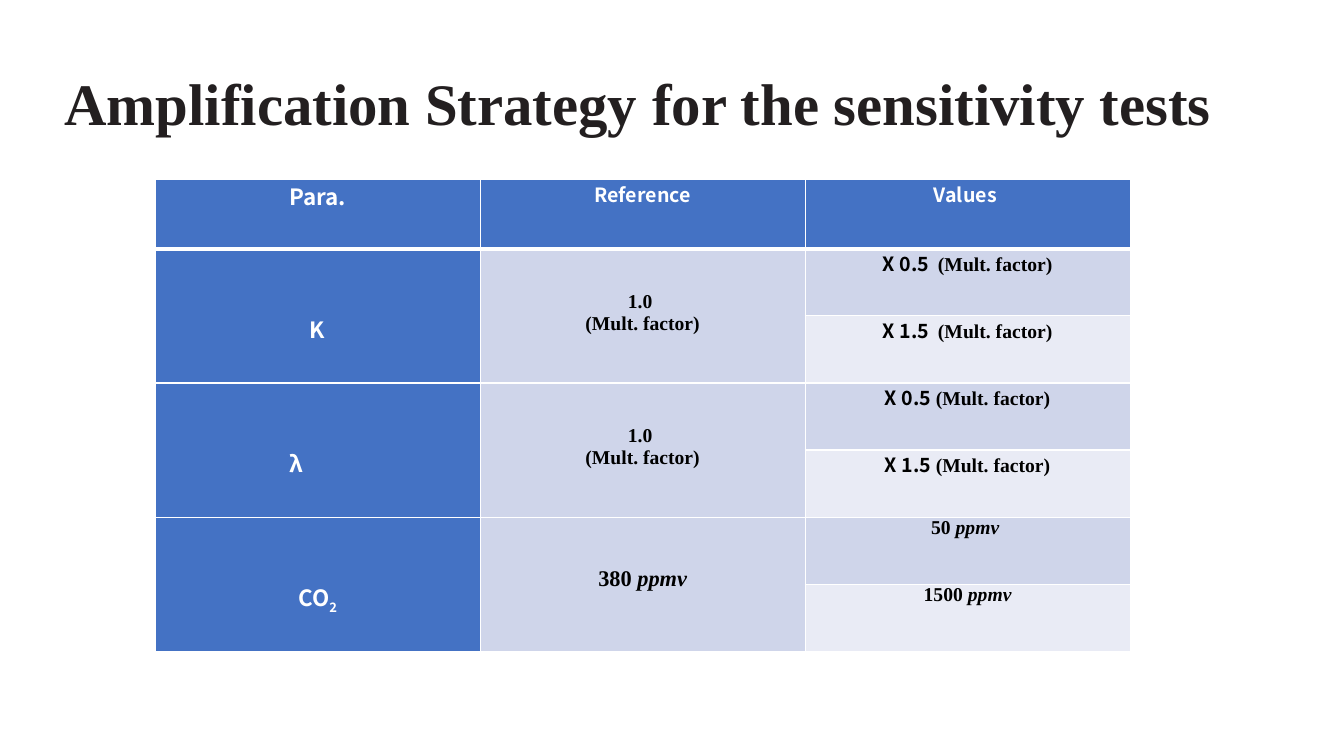
from lxml.etree import SubElement
from pptx import Presentation
from pptx.dml.color import RGBColor
from pptx.enum.text import MSO_ANCHOR as Anchor, MSO_AUTO_SIZE as AutoSize, PP_ALIGN as Align
from pptx.oxml.ns import qn
from pptx.util import Cm, Pt

COLORS = {
    "title": "231F20", "white": "FFFFFF", "black": "000000",
    "blue": "4472C4", "band": "CFD5EA", "light": "E9EBF5",
}
SANS, SERIF = "Noto Sans CJK SC", "Times New Roman"

TITLE = "Amplification Strategy for the sensitivity tests"
HEADERS = [("Para.", 16), ("Reference", 14), ("Values ", 14)]
FACTOR = ("(Mult. factor)", {})
UNIT = {"italic": True}
REFERENCE_FACTOR = {"lines": [[("1.0 ", {})], [FACTOR]], "size": 14, "top": 1.07}
PARAMETERS = [
    {
        "name": {"lines": [[("K", {})]]},
        "reference": REFERENCE_FACTOR,
        "values": [[("X 0.5  ", {"font": SANS}), FACTOR], [("X 1.5  ", {"font": SANS}), FACTOR]],
    },
    {
        "name": {"lines": [[("λ", {})]], "left": 3.38, "align": Align.LEFT},
        "reference": REFERENCE_FACTOR,
        "values": [[("X 0.5 ", {"font": SANS}), FACTOR], [("X 1.5 ", {"font": SANS}), FACTOR]],
    },
    {
        "name": {"lines": [[("CO", {}), ("2", {"baseline": -25000})]]},
        "reference": {"lines": [[("380 ", {}), ("ppmv", UNIT)]], "size": 16, "top": 1.24},
        "values": [[("50 ", {}), ("ppmv ", UNIT)], [("1500 ", {}), ("ppmv", UNIT)]],
    },
]

TABLE_LEFT, TABLE_TOP = 3.91, 4.52
COLUMN_WIDTH, HEADER_HEIGHT, ROW_HEIGHT = 8.19, 1.75, 1.69
SIDE_MARGIN = 0.17


def add_text(paragraph, text, font=SERIF, size=14, color="black", italic=False, baseline=None):
    run = paragraph.add_run()
    run.text = text
    run.font.name = font
    run.font.size = Pt(size)
    run.font.bold = True
    run.font.italic = italic
    run.font.color.rgb = RGBColor.from_string(COLORS[color])
    if baseline:
        run.font._element.set("baseline", str(baseline))


def style_cell(cell, fill, top_line=1, bottom_line=1):
    properties = cell._tc.get_or_add_tcPr()
    for side, width in (("L", 1), ("R", 1), ("T", top_line), ("B", bottom_line)):
        line = SubElement(properties, qn("a:ln" + side), w=str(Pt(width)))
        SubElement(SubElement(line, qn("a:solidFill")), qn("a:srgbClr"), val=COLORS["white"])
    cell.fill.solid()
    cell.fill.fore_color.rgb = RGBColor.from_string(COLORS[fill])


def fill_cell(cell, lines, top=0, left=SIDE_MARGIN, align=Align.CENTER, **text_format):
    cell.margin_left, cell.margin_right = Cm(left), Cm(SIDE_MARGIN)
    cell.margin_top, cell.margin_bottom = Cm(top), Cm(0)
    cell.vertical_anchor = Anchor.TOP
    frame = cell.text_frame
    for index, line in enumerate(lines):
        paragraph = frame.add_paragraph() if index else frame.paragraphs[0]
        paragraph.alignment = align
        for text, run_format in line:
            add_text(paragraph, text, **{**text_format, **run_format})


def add_title(slide):
    title = slide.shapes.title
    title.left, title.top, title.width, title.height = Cm(1.37), Cm(0.84), Cm(31.98), Cm(3.68)
    frame = title.text_frame
    frame.word_wrap = True
    frame.auto_size = AutoSize.NONE
    frame.vertical_anchor = Anchor.MIDDLE
    paragraph = frame.paragraphs[0]
    paragraph.alignment = Align.LEFT
    paragraph.line_spacing = 0.9
    add_text(paragraph, TITLE, size=42, color="title")


def add_parameter_table(slide):
    row_count, column_count = 1 + 2 * len(PARAMETERS), len(HEADERS)
    table = slide.shapes.add_table(
        row_count, column_count, Cm(TABLE_LEFT), Cm(TABLE_TOP),
        Cm(COLUMN_WIDTH * column_count), Cm(HEADER_HEIGHT + ROW_HEIGHT * (row_count - 1)),
    ).table
    for column in table.columns:
        column.width = Cm(COLUMN_WIDTH)
    for row_index, row in enumerate(table.rows):
        row.height = Cm(ROW_HEIGHT if row_index else HEADER_HEIGHT)
        value_fill = "band" if row_index % 2 else "light"
        fills = ("blue", "band", value_fill) if row_index else ("blue",) * column_count
        for cell, fill in zip(row.cells, fills):
            style_cell(cell, fill, 3 if row_index == 1 else 1, 1 if row_index else 3)

    for column_index, (text, size) in enumerate(HEADERS):
        fill_cell(table.cell(0, column_index), [[(text, {})]], font=SANS, size=size, color="white")
    for index, parameter in enumerate(PARAMETERS):
        first_row = 1 + 2 * index
        for column_index in (0, 1):
            table.cell(first_row, column_index).merge(table.cell(first_row + 1, column_index))
        fill_cell(table.cell(first_row, 0), top=1.6, font=SANS, size=16, color="white", **parameter["name"])
        fill_cell(table.cell(first_row, 1), **parameter["reference"])
        for offset, value in enumerate(parameter["values"]):
            fill_cell(table.cell(first_row + offset, 2), [value])


def main():
    presentation = Presentation()
    presentation.slide_width, presentation.slide_height = Cm(33.87), Cm(19.05)
    slide = presentation.slides.add_slide(presentation.slide_layouts[5])
    add_title(slide)
    add_parameter_table(slide)
    presentation.save("out.pptx")


if __name__ == "__main__":
    main()
